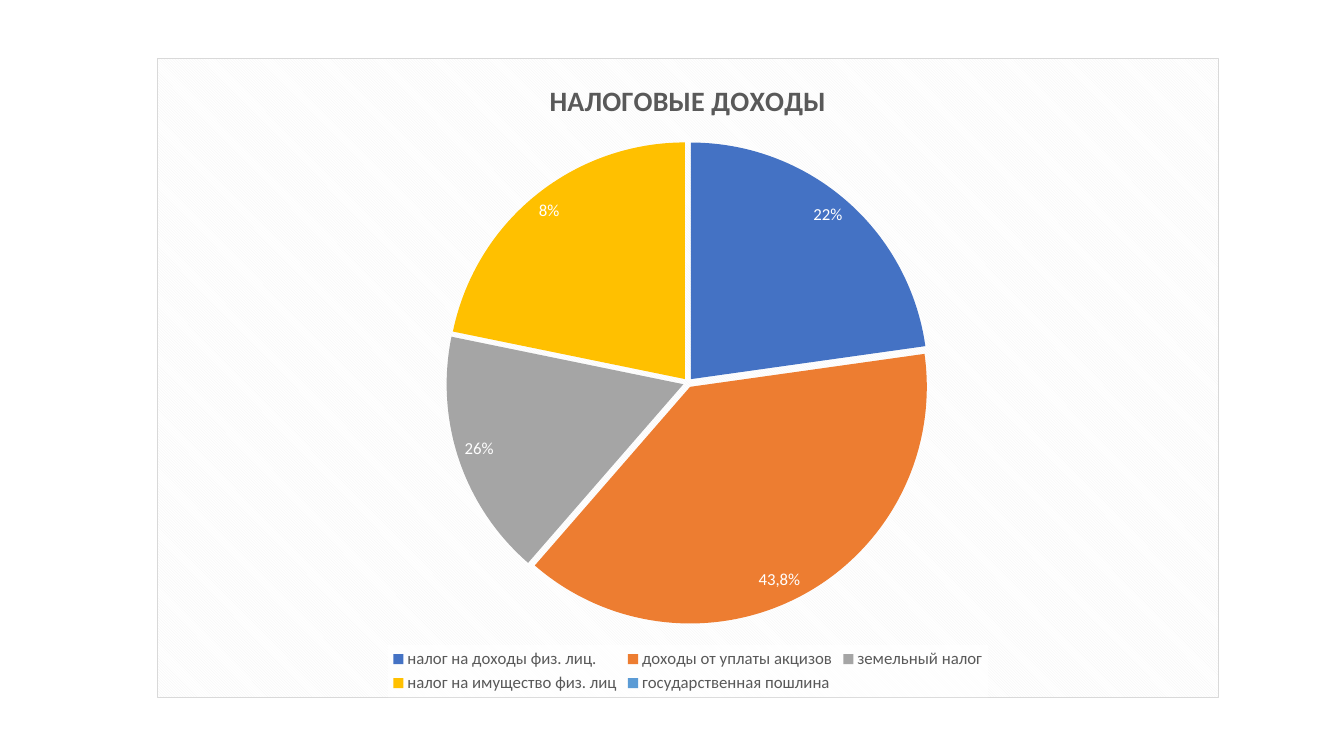
from lxml.etree import SubElement
from pptx import Presentation
from pptx.chart.data import CategoryChartData
from pptx.dml.color import RGBColor
from pptx.enum.chart import XL_CHART_TYPE as ChartType
from pptx.enum.chart import XL_LABEL_POSITION as LabelPos
from pptx.enum.chart import XL_LEGEND_POSITION as LegendPos
from pptx.oxml import parse_xml
from pptx.oxml.ns import nsdecls, qn
from pptx.util import Cm, Pt

# Content
TITLE = "НАЛОГОВЫЕ ДОХОДЫ"
BLUE = RGBColor(0x44, 0x72, 0xC4)
ORANGE = RGBColor(0xED, 0x7D, 0x31)
GRAY = RGBColor(0xA5, 0xA5, 0xA5)
GOLD = RGBColor(0xFF, 0xC0, 0x00)
SKY = RGBColor(0x5B, 0x9B, 0xD5)
TAXES = [  # name, value, own label, colour
    ("налог на доходы физ. лиц.", 23, "22%", BLUE),
    ("доходы от уплаты акцизов", 39, "43,8%", ORANGE),
    ("земельный налог", 17, "26%", GRAY),
    ("налог на имущество физ. лиц", 22, "8%", GOLD),
    ("государственная пошлина", 0, None, SKY),
]

# Style
FONT = "Calibri"
BLACK = RGBColor(0x00, 0x00, 0x00)
WHITE = RGBColor(0xFF, 0xFF, 0xFF)
TEXT_GRAY = RGBColor(0x59, 0x59, 0x59)
STRIPE = RGBColor(0xF2, 0xF2, 0xF2)
BORDER = RGBColor(0xD9, 0xD9, 0xD9)


def set_font(font, size, color, bold=False):
    font.name = FONT
    font.size = Pt(size)
    font.bold = bold
    font.color.rgb = color


deck = Presentation()
deck.slide_width, deck.slide_height = Cm(33.87), Cm(19.05)
slide = deck.slides.add_slide(deck.slide_layouts[6])

# Pie
tax_data = CategoryChartData()
tax_data.categories = [name for name, *_ in TAXES]
tax_data.add_series("Series 1", [value for _, value, *_ in TAXES])
pie = slide.shapes.add_chart(
    ChartType.PIE, Cm(3.96), Cm(1.45), Cm(26.75), Cm(16.13), tax_data
).chart
set_font(pie.font, 10, BLACK)
pie.plots[0].vary_by_categories = True

# Title
pie.has_title = True
title = pie.chart_title
title.include_in_layout = False
heading = title.text_frame.paragraphs[0]
heading.text = TITLE
set_font(heading.font, 20, TEXT_GRAY, bold=True)

# Slices, pulled slightly apart
slices = pie.plots[0].series[0]
explosion = SubElement(slices._element, qn("c:explosion"), val="2")
slices._element.find(qn("c:tx")).addnext(explosion)

percents = slices.data_labels
percents.show_value = False
percents.show_percentage = True
percents.position = LabelPos.INSIDE_END
set_font(percents.font, 12, WHITE, bold=True)

for index, (_, _, label, color) in enumerate(TAXES):
    tax_slice = slices.points[index]
    tax_slice.format.fill.solid()
    tax_slice.format.fill.fore_color.rgb = color
    if label:
        caption = tax_slice.data_label.text_frame.paragraphs[0]
        caption.text = label
        set_font(caption.font, 12, WHITE)
        tax_slice.data_label.position = LabelPos.INSIDE_END

# Legend on a translucent white panel
pie.has_legend = True
legend = pie.legend
legend.position = LegendPos.BOTTOM
legend.include_in_layout = False
set_font(legend.font, 12, TEXT_GRAY)
legend._element.find(qn("c:txPr")).addprevious(parse_xml(
    f'<c:spPr {nsdecls("c", "a")}><a:solidFill><a:srgbClr val="{WHITE}">'
    '<a:alpha val="78000"/></a:srgbClr></a:solidFill></c:spPr>'
))

# Striped chart background with a thin border
pie._chartSpace.find(qn("c:chart")).addnext(parse_xml(
    f'<c:spPr {nsdecls("c", "a")}><a:pattFill prst="dkDnDiag">'
    f'<a:fgClr><a:srgbClr val="{STRIPE}"/></a:fgClr>'
    f'<a:bgClr><a:srgbClr val="{WHITE}"/></a:bgClr></a:pattFill>'
    f'<a:ln w="{Pt(0.75)}"><a:solidFill><a:srgbClr val="{BORDER}"/>'
    '</a:solidFill></a:ln></c:spPr>'
))

deck.save("out.pptx")
